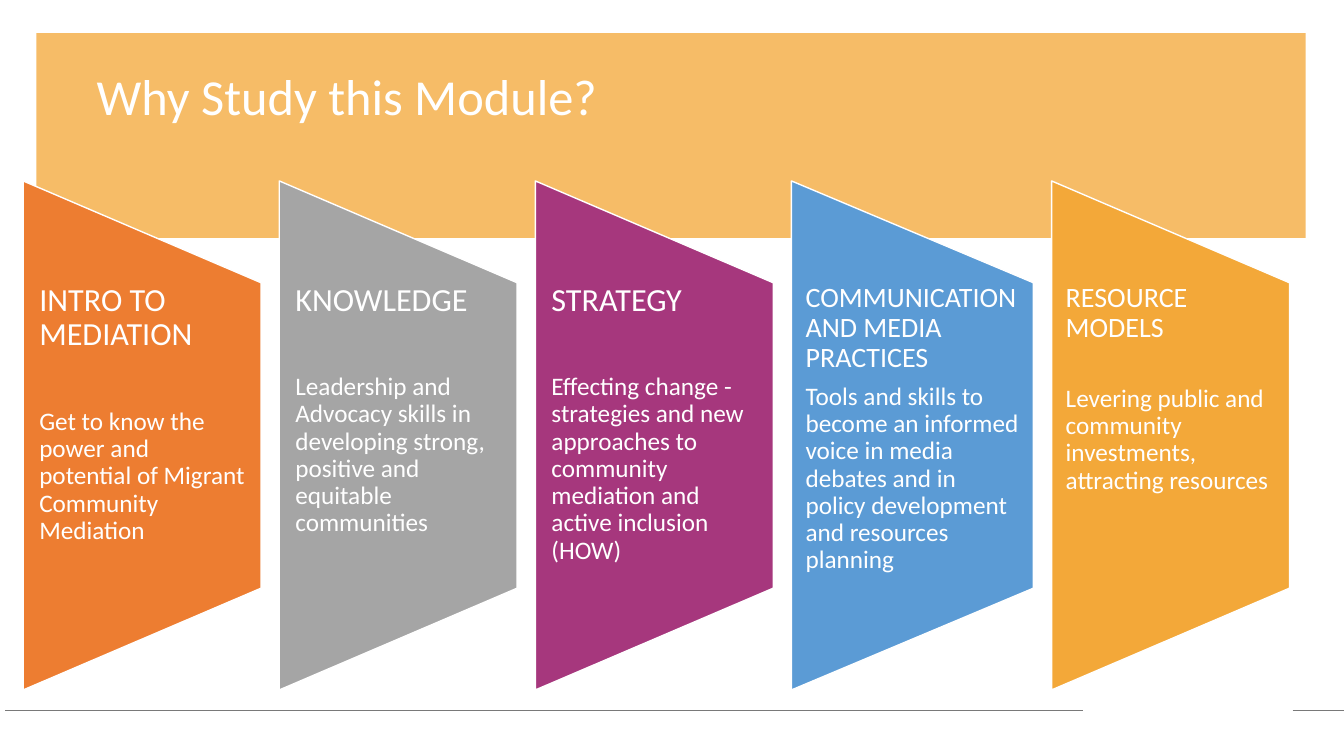
import pptx
import pptx.util
import pptx.dml.color
import pptx.enum.shapes
import pptx.enum.text

Inches = pptx.util.Inches
Pt = pptx.util.Pt
SHAPE = pptx.enum.shapes.MSO_SHAPE

COLORS = {
    "white": "FFFFFF", "banner": "F6BC67", "rule": "797979",
    "orange": "ED7D31", "gray": "A5A5A5", "purple": "A6377D",
    "blue": "5B9BD5", "amber": "F3A839",
}
TITLE = "Why Study this Module?"
PANELS = [
    dict(head="INTRO TO MEDIATION",
         body="Get to know the power and potential of Migrant Community Mediation",
         color="orange", width=2.36, inset=0.16, size=23, gap=40),
    dict(head="KNOWLEDGE",
         body="Leadership and Advocacy skills in developing strong, positive and equitable communities",
         color="gray", width=2.36, inset=0.16, size=23, gap=40),
    dict(head="STRATEGY",
         body="Effecting change - strategies and new approaches to community mediation and active inclusion (HOW)",
         color="purple", width=2.36, inset=0.16, size=23, gap=40),
    dict(head="COMMUNICATION AND MEDIA PRACTICES",
         body="Tools and skills to become an informed voice in media debates and in policy development and resources planning",
         color="blue", width=2.4, inset=0.14, size=20, gap=7),
    dict(head="RESOURCE MODELS",
         body="Levering public and community investments, attracting resources",
         color="amber", width=2.36, inset=0.14, size=20, gap=30),
]
RULES = [(0.05, 10.74), (12.82, 13.33)]
RULE_Y = 7.05
PANEL_LEFT, PANEL_GAP, PANEL_HEIGHT, PANEL_MIDDLE = 0.23, 0.18, 5.05, 4.32
TEXT_TOP, TEXT_HEIGHT = 2.81, 3.03


def rgb(name):
    return pptx.dml.color.RGBColor.from_string(COLORS[name])


def add_shape(s, kind, left, top, width, height, fill, line=None):
    sp = s.shapes.add_shape(kind, Inches(left), Inches(top), Inches(width), Inches(height))
    sp.shadow.inherit = False
    sp.fill.solid()
    sp.fill.fore_color.rgb = rgb(fill)
    if line:
        sp.line.color.rgb = rgb(line)
        sp.line.width = Pt(1)
    else:
        sp.line.fill.background()
    return sp


def add_box(s, left, top, width, height, inset_x=0.1, inset_y=0.05):
    tf = s.shapes.add_textbox(Inches(left), Inches(top), Inches(width), Inches(height)).text_frame
    tf.word_wrap = True
    tf.vertical_anchor = pptx.enum.text.MSO_ANCHOR.TOP
    tf.margin_left = tf.margin_right = Inches(inset_x)
    tf.margin_top = tf.margin_bottom = Inches(inset_y)
    return tf


def write(p, text, size=18, color="white", after=0):
    p.line_spacing = 0.9
    p.space_after = Pt(after)
    r = p.add_run()
    r.text = text
    r.font.name = "Calibri"
    r.font.size = Pt(size)
    r.font.color.rgb = rgb(color)


def add_rule(s, start, end):
    c = s.shapes.add_connector(pptx.enum.shapes.MSO_CONNECTOR.STRAIGHT,
                               Inches(start), Inches(RULE_Y), Inches(end), Inches(RULE_Y))
    c.line.color.rgb = rgb("rule")
    c.line.width = Pt(0.5)
    pptx.oxml.ns.qn("a:effectLst")
    c._element.spPr.append(pptx.oxml.parse_xml(
        '<a:effectLst xmlns:a="http://schemas.openxmlformats.org/drawingml/2006/main"/>'))


def add_panel(s, left, panel):
    width = panel["width"]
    sp = add_shape(s, SHAPE.FLOWCHART_MANUAL_OPERATION,
                   left + (width - PANEL_HEIGHT) / 2, PANEL_MIDDLE - width / 2,
                   PANEL_HEIGHT, width, panel["color"], line="white")
    sp.rotation = 270
    tf = add_box(s, left, TEXT_TOP, width, TEXT_HEIGHT, panel["inset"], 0)
    write(tf.paragraphs[0], panel["head"], size=panel["size"], after=panel["gap"])
    write(tf.add_paragraph(), panel["body"])


def main():
    prs = pptx.Presentation()
    prs.slide_width, prs.slide_height = Inches(13.33), Inches(7.5)
    s = prs.slides.add_slide(prs.slide_layouts[6])
    add_shape(s, SHAPE.RECTANGLE, 0.36, 0.33, 12.59, 2.03, "banner")
    for start, end in RULES:
        add_rule(s, start, end)
    write(add_box(s, 0.86, 0.67, 11.55, 0.76).paragraphs[0], TITLE, size=36)
    left = PANEL_LEFT
    for panel in PANELS:
        add_panel(s, left, panel)
        left += panel["width"] + PANEL_GAP
    prs.save("out.pptx")


if __name__ == "__main__":
    main()
